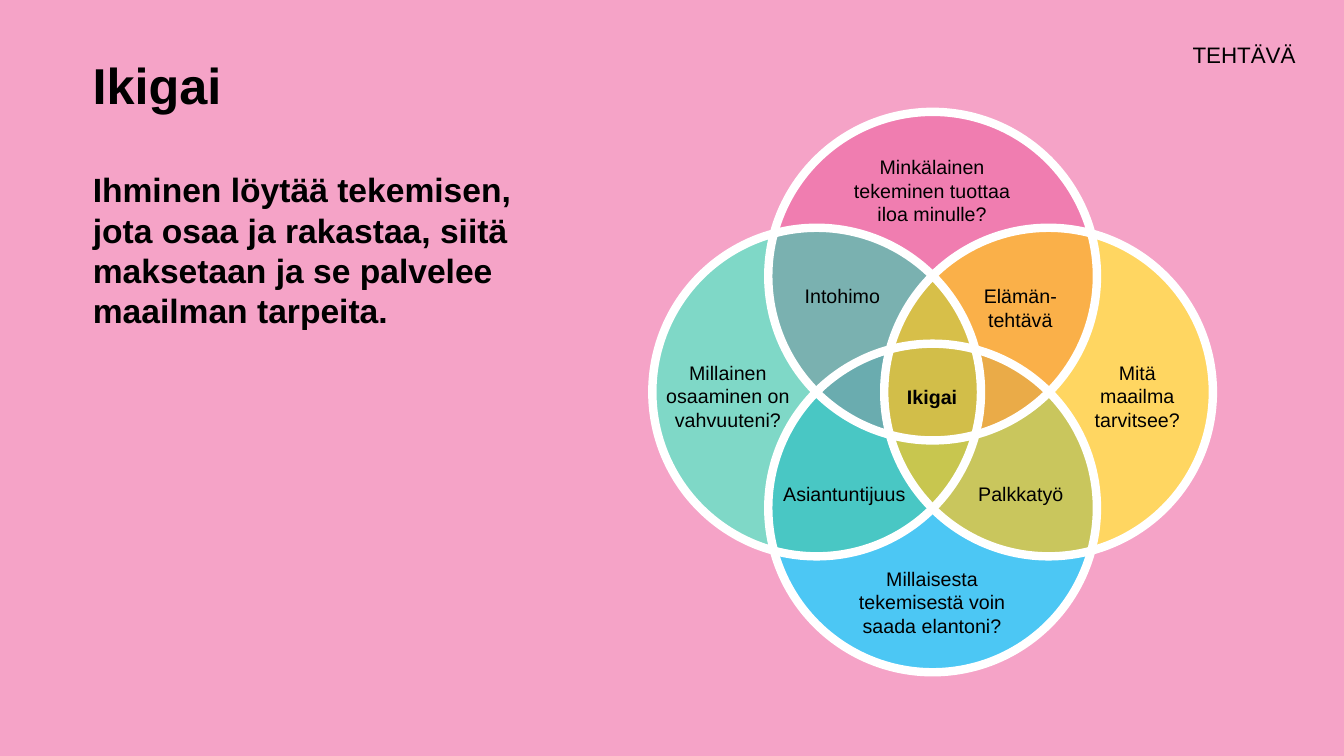
from lxml import etree
from pptx import Presentation, util as u
from pptx.dml.color import RGBColor
from pptx.enum import shapes, text
from pptx.oxml.ns import qn

COLORS = {"background": "F5A3C7", "black": "000000", "white": "FFFFFF", "joy": "EB478F",
          "earning": "00B0F0", "skill": "49C8B0", "need": "FFC61E"}
ALIGN = text.PP_ALIGN
ANCHOR = text.MSO_ANCHOR


class IkigaiSlide:
    """Draws styled elements on one slide, with lengths in px of 1/100 inch."""

    scale = 9144
    font = "Arial"

    def __init__(self, presentation, width, height):
        presentation.slide_width = self.px(width)
        presentation.slide_height = self.px(height)
        self.slide = presentation.slides.add_slide(presentation.slide_layouts[6])
        self.paint(self.slide.background.fill, "background")

    def px(self, length):
        return u.Emu(length * self.scale)

    def box(self, *lengths):
        return [self.px(length) for length in lengths]

    def apply(self, target, values):
        for name, value in values.items():
            setattr(target, name, value)

    def paint(self, fill, color):
        fill.solid()
        fill.fore_color.rgb = RGBColor.from_string(COLORS[color])

    def text(self, box, words, size=14, bold=False, align=ALIGN.CENTER,
             anchor=ANCHOR.TOP, insets=(10, 5, 10, 5), before=0):
        shape = self.slide.shapes.add_textbox(*self.box(*box))
        frame = shape.text_frame
        sides = ("margin_left", "margin_top", "margin_right", "margin_bottom")
        self.apply(frame, {"word_wrap": True, "vertical_anchor": anchor,
                           **dict(zip(sides, self.box(*insets)))})
        paragraph = frame.paragraphs[0]
        self.apply(paragraph, {"text": words, "alignment": align, "space_before": u.Pt(before)})
        font = paragraph.runs[0].font
        self.apply(font, {"name": self.font, "size": u.Pt(size), "bold": bold})
        self.paint(font.fill, "black")

    def circle(self, center_x, center_y, diameter, fill=None, alpha=100, line=None):
        radius = diameter // 2
        shape = self.slide.shapes.add_shape(
            shapes.MSO_SHAPE.OVAL,
            *self.box(center_x - radius, center_y - radius, diameter, diameter))
        shape.shadow.inherit = False
        if fill:
            self.paint(shape.fill, fill)
            color = shape.fill._xPr.find(".//" + qn("a:srgbClr"))
            etree.SubElement(color, qn("a:alpha"), val=str(alpha * 1000))
        else:
            shape.fill.background()
        if line:
            self.paint(shape.line.fill, line)
            shape.line.width = u.Pt(6)
        else:
            shape.line.fill.background()


def main():
    presentation = Presentation()
    page = IkigaiSlide(presentation, 1333, 750)

    plain = {"insets": (0, 0, 0, 0), "bold": True, "align": ALIGN.LEFT}
    page.text((1159, 36, 138, 37), "TEHTÄVÄ", size=16, align=ALIGN.RIGHT,
              anchor=ANCHOR.MIDDLE, insets=(0, 0, 12, 0))
    page.text((92, 0, 1150, 168), "Ikigai", size=36, anchor=ANCHOR.MIDDLE, **plain)
    page.text((92, 168, 465, 508), "Ihminen löytää tekemisen, jota osaa ja rakastaa, "
              "siitä maksetaan ja se palvelee maailman tarpeita.", size=24, before=8, **plain)

    center_x, center_y, offset, diameter = 925, 392, 115, 326
    circles = [("earning", 0, 1), ("joy", 0, -1), ("skill", -1, 0), ("need", 1, 0)]
    layers = [(0, "white", 100, None), (0, "topic", 70, None), (-3, None, 100, "white")]
    for shift, fill, alpha, line in layers:
        for topic, across, down in circles:
            page.circle(center_x + across * offset, center_y + down * offset + shift, diameter,
                        topic if fill == "topic" else fill, alpha, line)

    labels = [
        ((836, 149, 177, 81), "Minkälainen tekeminen tuottaa iloa minulle?"),
        ((836, 557, 177, 81), "Millaisesta tekemisestä voin saada elantoni?"),
        ((749, 473, 177, 34), "Asiantuntijuus"),
        ((924, 473, 177, 34), "Palkkatyö"),
        ((951, 277, 122, 57), "Elämän-tehtävä"),
        ((747, 277, 177, 34), "Intohimo"),
        ((1067, 353, 122, 81), "Mitä maailma tarvitsee?"),
        ((649, 353, 146, 81), "Millainen osaaminen on vahvuuteni?"),
    ]
    for box, words in labels:
        page.text(box, words)
    page.text((871, 377, 107, 34), "Ikigai", bold=True)

    presentation.save("out.pptx")


if __name__ == "__main__":
    main()
